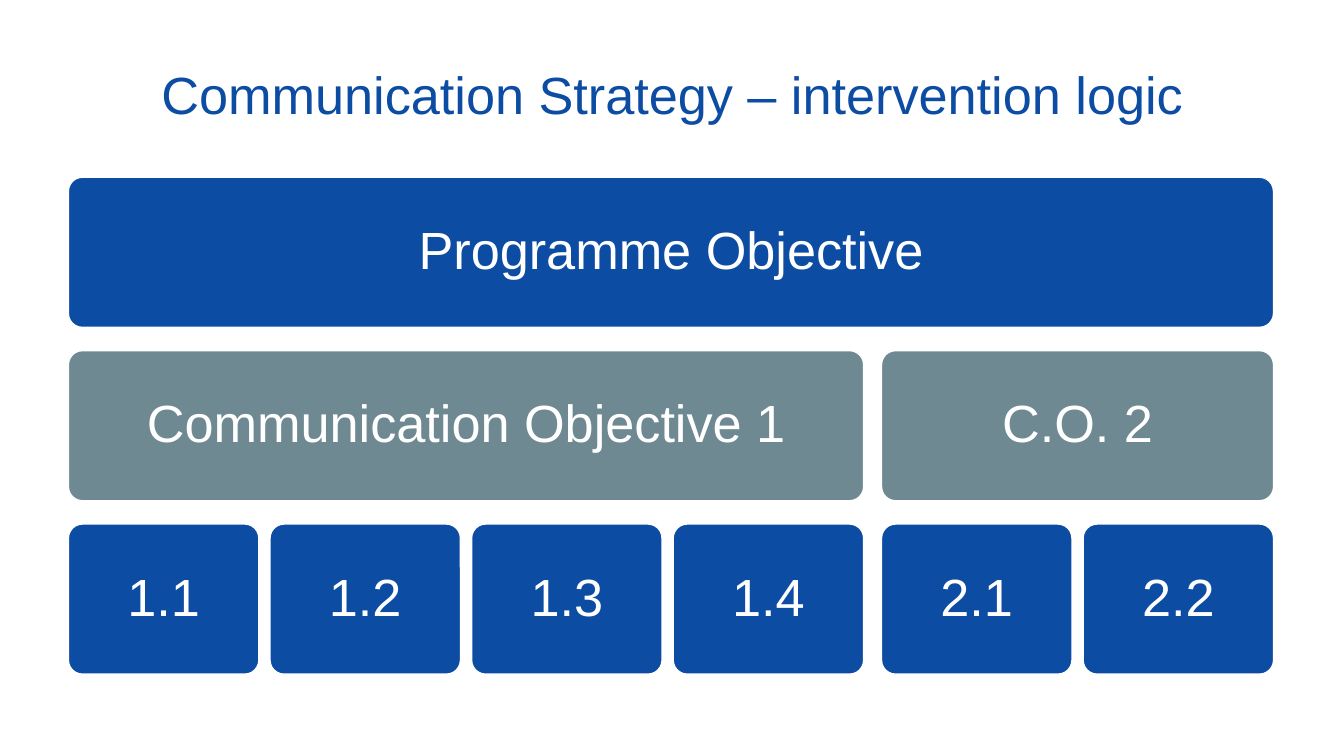
from pptx import Presentation
from pptx.dml.color import RGBColor
from pptx.enum.shapes import MSO_SHAPE
from pptx.enum.text import MSO_ANCHOR, PP_ALIGN
from pptx.util import Pt

PX = 4572
BLUE = RGBColor(0x0C, 0x4C, 0xA3)
GREY = RGBColor(0x6E, 0x89, 0x92)
WHITE = RGBColor(0xFF, 0xFF, 0xFF)

LEFT, TOP = 100, 262
BOX_W, BOX_H = 287, 227
COL_STEP, ROW_STEP = 300, 258
GROUP_GAP = 10


def write(sp, text, color=WHITE, size=28, spacing=0.9, inset=30):
    tf = sp.text_frame
    tf.word_wrap = True
    tf.vertical_anchor = MSO_ANCHOR.MIDDLE
    tf.margin_left = tf.margin_right = inset * PX
    tf.margin_top = tf.margin_bottom = inset * PX
    p = tf.paragraphs[0]
    p.alignment = PP_ALIGN.CENTER
    p.line_spacing = spacing
    r = p.add_run()
    r.text = text
    r.font.name = "Arial"
    r.font.size = Pt(size)
    r.font.color.rgb = color


def add_box(text, x, row, w, fill):
    y = TOP + row * ROW_STEP
    sp = s.shapes.add_shape(MSO_SHAPE.ROUNDED_RECTANGLE,
                            x * PX, y * PX, w * PX, BOX_H * PX)
    sp.adjustments[0] = 0.1
    sp.shadow.inherit = False
    sp.fill.solid()
    sp.fill.fore_color.rgb = fill
    sp.line.color.rgb = WHITE
    sp.line.width = Pt(2)
    write(sp, text)


prs = Presentation()
prs.slide_width = 2000 * PX
prs.slide_height = 1125 * PX
s = prs.slides.add_slide(prs.slide_layouts[6])

title = s.shapes.add_textbox(100 * PX, 46 * PX, 1800 * PX, 188 * PX)
write(title, "Communication Strategy – intervention logic",
      color=BLUE, spacing=1.0, inset=10)

add_box("Programme Objective", LEFT, 0, 1797, BLUE)

objectives = [
    ("Communication Objective 1", ["1.1", "1.2", "1.3", "1.4"]),
    ("C.O. 2", ["2.1", "2.2"]),
]
x = LEFT
for objective, parts in objectives:
    width = (len(parts) - 1) * COL_STEP + BOX_W
    add_box(objective, x, 1, width, GREY)
    for i, part in enumerate(parts):
        add_box(part, x + i * COL_STEP, 2, BOX_W, BLUE)
    x += len(parts) * COL_STEP + GROUP_GAP

prs.save("out.pptx")
